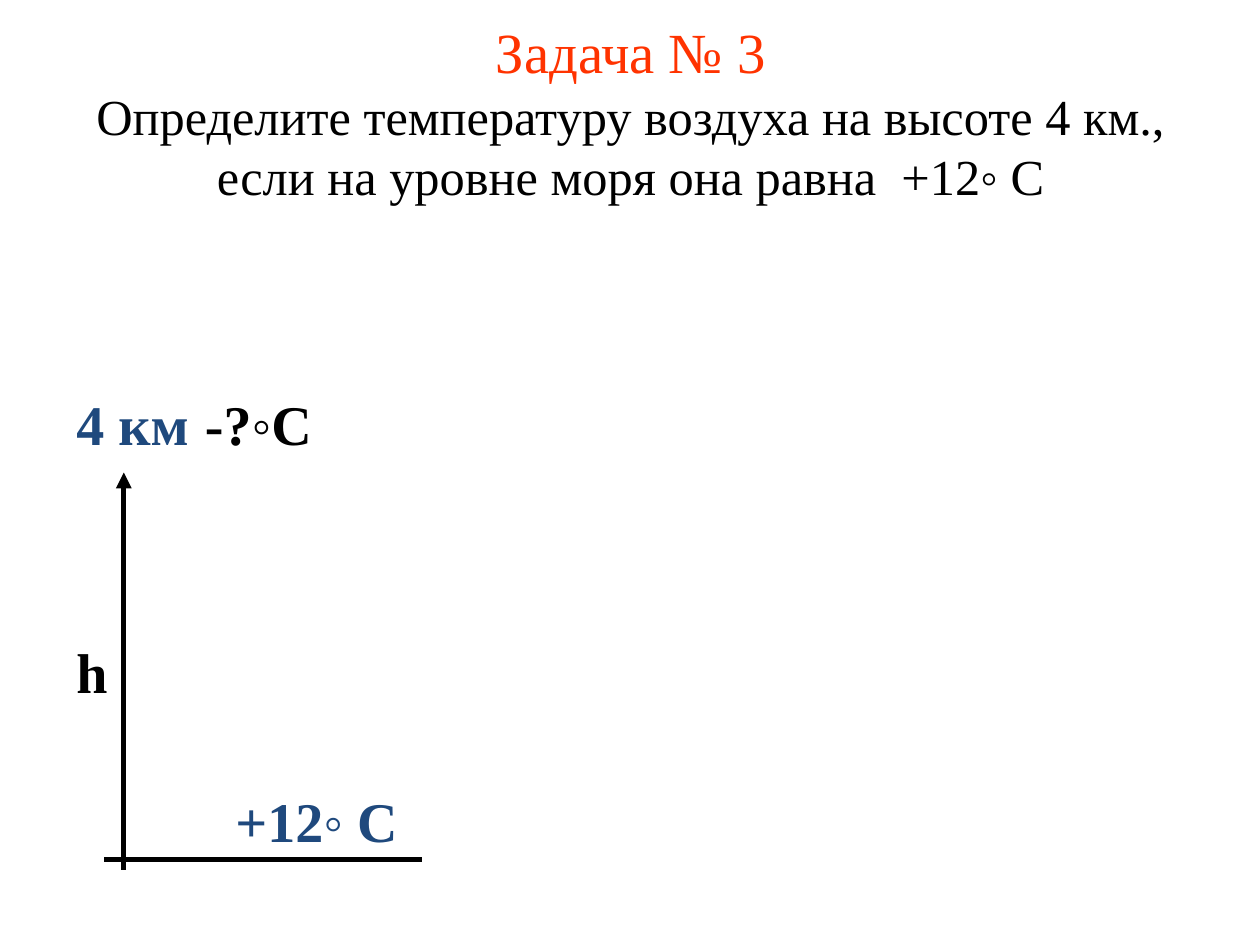
"""Build a slide with a school problem on how air temperature changes with height."""
from lxml import etree
from pptx import Presentation
from pptx.dml.color import RGBColor
from pptx.enum.shapes import MSO_CONNECTOR
from pptx.enum.text import MSO_ANCHOR, MSO_AUTO_SIZE, PP_ALIGN
from pptx.oxml.ns import qn
from pptx.util import Pt

STRAIGHT = MSO_CONNECTOR.STRAIGHT
MIDDLE = MSO_ANCHOR.MIDDLE
CENTER = PP_ALIGN.CENTER
FIT_SHAPE = MSO_AUTO_SIZE.SHAPE_TO_FIT_TEXT
BLACK = RGBColor(0x00, 0x00, 0x00)
RED = RGBColor(0xFF, 0x33, 0x00)
BLUE = RGBColor(0x1F, 0x49, 0x7D)


class ProblemSlide:
    font_name = "Times New Roman"
    label_size = Pt(32)
    label_height = Pt(46)
    line_width = Pt(3)

    def __init__(self, slide):
        self.slide = slide

    def heading(self, left, top, width, height, lines):
        frame = self.slide.shapes.add_textbox(Pt(left), Pt(top), Pt(width), Pt(height)).text_frame
        frame.word_wrap = True
        frame.vertical_anchor = MIDDLE
        paragraph = frame.paragraphs[0]
        paragraph.alignment = CENTER
        paragraph.font.name = self.font_name
        for index, (text, size, color) in enumerate(lines):
            if index:
                paragraph.add_line_break()
            run = paragraph.add_run()
            run.text = text
            run.font.size = Pt(size)
            run.font.color.rgb = color

    def label(self, left, top, width, text, color):
        box = self.slide.shapes.add_textbox(Pt(left), Pt(top), Pt(width), self.label_height)
        frame = box.text_frame
        frame.word_wrap = False
        frame.auto_size = FIT_SHAPE
        paragraph = frame.paragraphs[0]
        paragraph.text = text
        font = paragraph.font
        font.name = self.font_name
        font.size = self.label_size
        font.bold = True
        font.color.rgb = color

    def line(self, x1, y1, x2, y2, arrow=False):
        connector = self.slide.shapes.add_connector(STRAIGHT, Pt(x1), Pt(y1), Pt(x2), Pt(y2))
        connector.line.color.rgb = BLACK
        connector.line.width = self.line_width
        properties = connector._element.spPr
        if arrow:
            etree.SubElement(properties.find(qn("a:ln")), qn("a:tailEnd"), type="triangle")
        etree.SubElement(properties, qn("a:effectLst"))


def main():
    presentation = Presentation()
    presentation.slide_width = Pt(720)
    presentation.slide_height = Pt(540)
    problem = ProblemSlide(presentation.slides.add_slide(presentation.slide_layouts[6]))

    problem.heading(36.5, 9.5, 648, 108, [
        ("Задача № 3", 32.4, RED),
        ("Определите температуру воздуха на высоте 4 км., "
         "если на уровне моря она равна  +12◦ С", 28.8, BLACK),
    ])
    for left, top, width, text, color in [
        (36.5, 219, 81.5, "4 км", BLUE),
        (110, 219, 79, "-?◦С", BLACK),
        (127.5, 446, 108, "+12◦ С", BLUE),
        (36.5, 361, 32.5, "h", BLACK),
    ]:
        problem.label(left, top, width, text, color)

    problem.line(59.5, 491, 241, 491)
    problem.line(70.75, 497, 70.75, 270, arrow=True)
    presentation.save("out.pptx")


if __name__ == "__main__":
    main()
